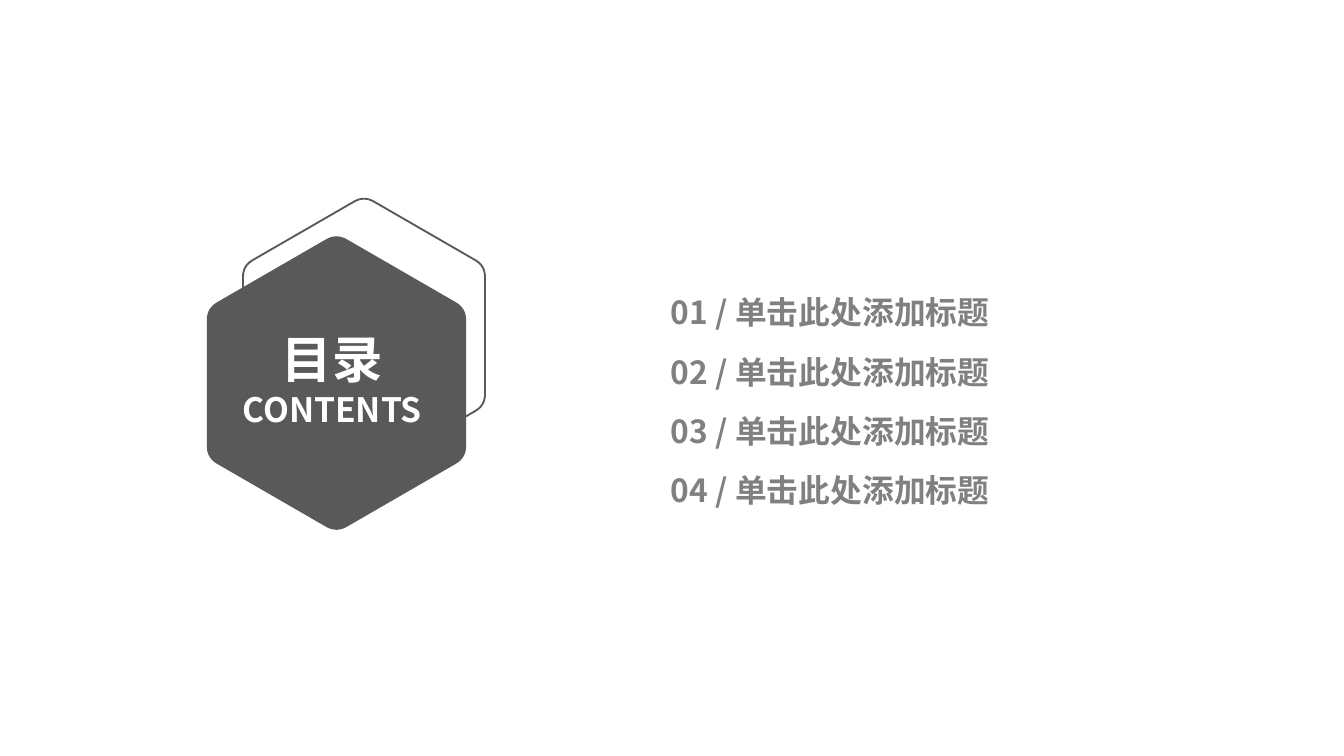
from math import cos, pi, sin

from lxml.etree import SubElement
from pptx import Presentation
from pptx.dml.color import RGBColor
from pptx.enum.text import MSO_ANCHOR, MSO_AUTO_SIZE, PP_ALIGN
from pptx.oxml.ns import qn
from pptx.util import Cm, Pt

COLORS = {"dark": "595959", "gray": "808080", "white": "FFFFFF"}
FONT = "Noto Sans CJK SC"
ITEMS = ["单击此处添加标题"] * 4


def rgb(name):
    return RGBColor.from_string(COLORS[name])


def add_run(p, text, size, color):
    r = p.add_run()
    r.text = text
    r.font.size = Pt(size)
    r.font.bold = True
    r.font.name = FONT
    r.font.color.rgb = rgb(color)
    SubElement(r.font._element, qn("a:ea"), typeface=FONT)


def format_frame(tf):
    tf.word_wrap = True
    tf.auto_size = MSO_AUTO_SIZE.NONE
    tf.vertical_anchor = MSO_ANCHOR.TOP
    tf.margin_left = tf.margin_right = Cm(0.18)
    tf.margin_top = tf.margin_bottom = Cm(0.1)


def add_hexagon(s, cx, cy, radius, cut=0.08, steps=8):
    corners = [(cx + radius * sin(i * pi / 3), cy - radius * cos(i * pi / 3))
               for i in range(6)]
    points = []
    for i, corner in enumerate(corners):
        before, after = corners[i - 1], corners[(i + 1) % 6]
        start = [c + (b - c) * cut for c, b in zip(corner, before)]
        end = [c + (a - c) * cut for c, a in zip(corner, after)]
        for k in range(steps + 1):
            t = k / steps
            points.append(tuple(
                Cm((1 - t) ** 2 * a + 2 * t * (1 - t) * c + t ** 2 * b)
                for a, c, b in zip(start, corner, end)))
    builder = s.shapes.build_freeform(*points[0])
    builder.add_line_segments(points[1:], close=True)
    sp = builder.convert_to_shape()
    sp.shadow.inherit = False
    return sp


def add_badge(s, left, top, width, height):
    outline = add_hexagon(s, left + width * 0.65, top + height * 0.4, 2.64)
    outline.fill.background()
    outline.line.color.rgb = rgb("dark")
    outline.line.width = Pt(1)

    solid = add_hexagon(s, left + width / 2, top + height / 2 + 0.3, 2.83)
    solid.fill.solid()
    solid.fill.fore_color.rgb = rgb("dark")
    solid.line.fill.background()

    title = s.shapes.title
    title.left, title.top = Cm(left + width / 2 - 2.39), Cm(top + height / 2 - 0.84)
    title.width, title.height = Cm(4.62), Cm(2.11)
    solid._element.addnext(title._element)
    tf = title.text_frame
    format_frame(tf)
    lines = [("目录", 27), ("CONTENTS", 18)]
    for i, (text, size) in enumerate(lines):
        p = tf.add_paragraph() if i else tf.paragraphs[0]
        p.alignment = PP_ALIGN.CENTER
        add_run(p, text, size, "white")


def add_contents(s, left, top, width, height):
    pitch = height / len(ITEMS)
    for i, item in enumerate(ITEMS):
        box = s.shapes.add_textbox(Cm(left), Cm(top + i * pitch), Cm(width), Cm(0.91))
        format_frame(box.text_frame)
        add_run(box.text_frame.paragraphs[0], f"{i + 1:02d} / {item}", 17, "gray")


def main():
    prs = Presentation()
    prs.slide_width, prs.slide_height = Cm(25.4), Cm(14.29)
    s = prs.slides.add_slide(prs.slide_layouts[5])
    add_badge(s, 4.63, 3.96, 3.46, 5.96)
    add_contents(s, 12.5, 5.44, 8, 4.48)
    prs.save("out.pptx")


if __name__ == "__main__":
    main()
